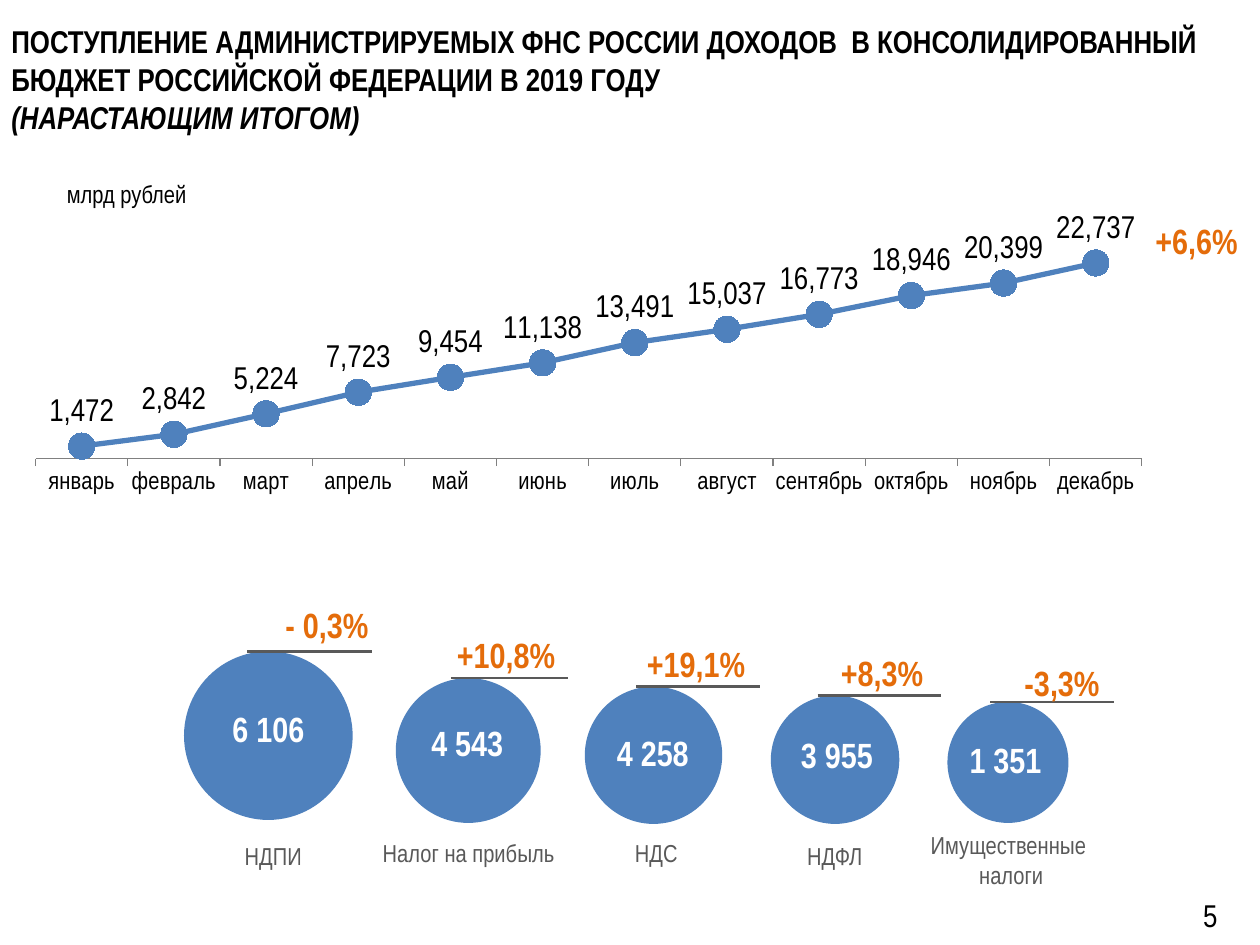
from collections import namedtuple

from lxml import etree
from pptx import Presentation
from pptx import util as u
from pptx.chart.data import CategoryChartData
from pptx.dml.color import RGBColor
from pptx.enum import chart as ch, shapes, text
from pptx.oxml.ns import qn

Cm, Pt = u.Cm, u.Pt
FONT = "Arial Narrow"
COLORS = {
    "black": "000000",
    "white": "FFFFFF",
    "blue": "4F81BD",
    "orange": "E46C0A",
    "grey": "595959",
    "axis": "808080",
}

MONTHS = {
    "январь": 1472, "февраль": 2842, "март": 5224, "апрель": 7723,
    "май": 9454, "июнь": 11138, "июль": 13491, "август": 15037,
    "сентябрь": 16773, "октябрь": 18946, "ноябрь": 20399, "декабрь": 22737,
}

# Positions in cm; *_at are the centres of the texts.
Tax = namedtuple("Tax", "name amount change left top diameter amount_at change_at rule name_at")
TAXES = [
    Tax("НДПИ", "6 106", "- 0,3%", 3.71, 13.13, 3.4,
        (5.41, 14.68), (6.59, 12.6), (4.98, 7.49), (5.51, 17.25)),
    Tax("Налог на прибыль", "4 543", "+10,8%", 7.98, 13.67, 2.92,
        (9.42, 14.96), (10.2, 13.21), (9.09, 11.46), (9.45, 17.2)),
    Tax("НДС", " 4 258", "+19,1%", 11.79, 13.84, 2.77,
        (13.08, 15.16), (14.03, 13.39), (12.83, 15.32), (13.23, 17.2)),
    Tax("НДФЛ", "3 955", "+8,3%", 15.54, 14.02, 2.59,
        (16.87, 15.21), (17.78, 13.56), (16.48, 18.97), (16.83, 17.25)),
    Tax("Имущественные\n налоги", "1 351", "-3,3%", 19.1, 14.15, 2.44,
        (20.27, 15.32), (21.41, 13.77), (19.96, 22.45), (20.33, 17.34)),
]


def rgb(name):
    return RGBColor.from_string(COLORS[name])


def style_font(font, size, color, bold=False):
    font.name, font.size, font.bold = FONT, Pt(size), bold
    font.color.rgb = rgb(color)


def add_label(slide, content, left, top, width, height, size, color,
              bold=False, align=text.PP_ALIGN.LEFT, middle=False, wrap=False):
    box = slide.shapes.add_textbox(Cm(left), Cm(top), Cm(width), Cm(height))
    frame = box.text_frame
    frame.text = content
    frame.word_wrap = wrap
    frame.vertical_anchor = text.MSO_ANCHOR.MIDDLE if middle else text.MSO_ANCHOR.TOP
    for paragraph in frame.paragraphs:
        paragraph.alignment = align
        style_font(paragraph.font, size, color, bold)
    return frame


def add_centred_label(slide, content, centre, width, height, size, color, **options):
    x, y = centre
    return add_label(slide, content, x - width / 2, y - height / 2, width, height,
                     size, color, align=text.PP_ALIGN.CENTER, **options)


def add_title(slide):
    frame = add_label(
        slide,
        "ПОСТУПЛЕНИЕ АДМИНИСТРИРУЕМЫХ ФНС РОССИИ ДОХОДОВ  В КОНСОЛИДИРОВАННЫЙ "
        "БЮДЖЕТ РОССИЙСКОЙ ФЕДЕРАЦИИ В 2019 ГОДУ ",
        -0.02, 0, 25.43, 3.18, 18, "black", bold=True, middle=True, wrap=True)
    heading = frame.paragraphs[0]
    heading.add_line_break()
    subtitle = heading.add_run()
    subtitle.text = "(НАРАСТАЮЩИМ ИТОГОМ)"
    subtitle.font.italic = True


def set_plot_area(chart, **fractions):
    """Fix the inner plot area to fractions of the chart."""
    plot_area = chart._chartSpace.chart.plotArea
    layout = plot_area.find(qn("c:layout"))
    if layout is None:
        layout = etree.Element(qn("c:layout"))
        plot_area.insert(0, layout)
    manual = etree.SubElement(layout, qn("c:manualLayout"))
    settings = {"layoutTarget": "inner", "xMode": "edge", "yMode": "edge", **fractions}
    for tag, value in settings.items():
        etree.SubElement(manual, qn(f"c:{tag}")).set("val", str(value))


def add_revenue_chart(slide):
    data = CategoryChartData(number_format="#,##0")
    data.categories = list(MONTHS)
    data.add_series("Series 1", list(MONTHS.values()))
    chart = slide.shapes.add_chart(
        ch.XL_CHART_TYPE.LINE_MARKERS_STACKED,
        Cm(-0.38), Cm(4.33), Cm(24.4), Cm(5.79), data).chart
    chart.has_legend = chart.has_title = False
    style_font(chart.font, 18, "black")
    set_plot_area(chart, x=0.045, y=0.1, w=0.914, h=0.75)

    months = chart.category_axis
    months.major_tick_mark = ch.XL_TICK_MARK.OUTSIDE
    style_font(months.tick_labels.font, 14, "black")
    months.format.line.color.rgb = rgb("axis")
    months.format.line.width = Pt(0.75)

    amounts = chart.value_axis
    amounts.visible = amounts.has_major_gridlines = False
    amounts.minimum_scale, amounts.maximum_scale = 0, 25000

    plot = chart.plots[0]
    plot.vary_by_categories = False
    revenue = plot.series[0]
    revenue.smooth = False
    revenue.format.line.color.rgb = rgb("blue")
    revenue.format.line.width = Pt(3)
    revenue.marker.style = ch.XL_MARKER_STYLE.CIRCLE
    revenue.marker.size = 15
    revenue.marker.format.fill.solid()
    revenue.marker.format.fill.fore_color.rgb = rgb("blue")
    revenue.marker.format.line.fill.background()

    labels = revenue.data_labels
    labels.show_value = True
    labels.position = ch.XL_LABEL_POSITION.ABOVE
    labels.number_format = "#,##0"
    labels.number_format_is_linked = False
    style_font(labels.font, 18, "black")


def add_circle(slide, left, top, diameter):
    circle = slide.shapes.add_shape(
        shapes.MSO_SHAPE.OVAL, Cm(left), Cm(top), Cm(diameter), Cm(diameter))
    circle.shadow.inherit = False
    circle.fill.solid()
    circle.fill.fore_color.rgb = rgb("blue")
    circle.line.fill.background()


def add_rule(slide, start, end, y):
    rule = slide.shapes.add_connector(
        shapes.MSO_CONNECTOR.STRAIGHT, Cm(start), Cm(y), Cm(end), Cm(y))
    rule.line.color.rgb = rgb("grey")
    rule.line.width = Pt(1.5)
    etree.SubElement(rule._element.spPr, qn("a:effectLst"))


def add_tax(slide, tax):
    """Circle with its amount, change over a rule, and name below."""
    add_circle(slide, tax.left, tax.top, tax.diameter)
    add_centred_label(slide, tax.amount, tax.amount_at, 2.49, 2.49, 20, "white",
                      bold=True, middle=True)
    add_rule(slide, *tax.rule, tax.top)
    add_centred_label(slide, tax.change, tax.change_at, 2.8, 1.12, 20, "orange", bold=True)
    name_height = 0.86 + 0.59 * tax.name.count("\n")
    name_width = 0.9 + 0.24 * max(map(len, tax.name.split("\n")))
    add_centred_label(slide, tax.name, tax.name_at, name_width, name_height, 14, "grey")


def main():
    deck = Presentation()
    deck.slide_width, deck.slide_height = Cm(25.4), Cm(19.05)
    slide = deck.slides.add_slide(deck.slide_layouts[6])

    add_title(slide)
    add_revenue_chart(slide)
    add_label(slide, "млрд рублей", 1.1, 3.48, 3.1, 0.86, 14, "black")
    add_label(slide, "+6,6%", 23.04, 4.3, 2.18, 1.12, 20, "orange", bold=True)
    for tax in TAXES:
        add_tax(slide, tax)
    page = add_centred_label(slide, "5", (24.4, 18.29), 2.01, 1.93, 18, "black",
                             middle=True, wrap=True)
    page.paragraphs[0].line_spacing = Pt(30.1)
    deck.save("out.pptx")


if __name__ == "__main__":
    main()
